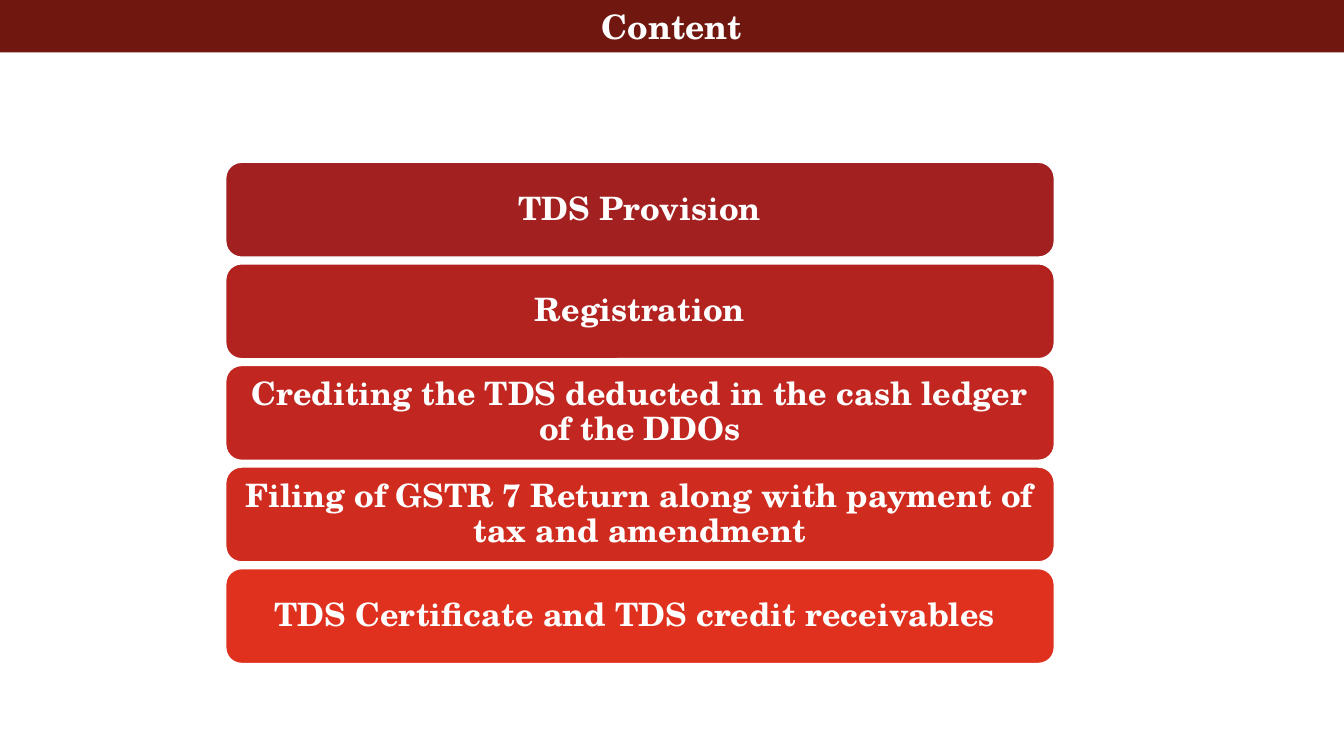
from pptx import Presentation
from pptx.dml.color import RGBColor
from pptx.enum.shapes import MSO_SHAPE
from pptx.enum.text import MSO_ANCHOR, PP_ALIGN
from pptx.util import Cm, Pt

FONT = "TeX Gyre Schola"
WHITE = "FFFFFF"
WIDTH, HEIGHT = 33.87, 19.05
TOPICS = [
    ("TDS Provision", "A32020"),
    ("Registration", "B22320"),
    ("Crediting the TDS deducted in the cash ledger of the DDOs", "C12720"),
    ("Filing of GSTR 7 Return along with payment of tax and amendment", "D02B1F"),
    ("TDS Certificate and TDS credit receivables ", "E0301E"),
]


def color(value):
    return RGBColor.from_string(value)


def write(sp, text, size=23, anchor=MSO_ANCHOR.MIDDLE, inset=(0.25, 0.25), spacing=None):
    tf = sp.text_frame
    tf.word_wrap = True
    tf.vertical_anchor = anchor
    tf.margin_left = tf.margin_right = Cm(inset[0])
    tf.margin_top = tf.margin_bottom = Cm(inset[1])
    p = tf.paragraphs[0]
    p.alignment = PP_ALIGN.CENTER
    p.line_spacing = spacing
    r = p.add_run()
    r.text = text
    r.font.name = FONT
    r.font.size = Pt(size)
    r.font.bold = True
    r.font.color.rgb = color(WHITE)


class Deck:
    """Holds the slide and draws its title bar and topic boxes."""

    def __init__(self, prs):
        self.s = prs.slides.add_slide(prs.slide_layouts[6])

    def box(self, kind, left, top, width, height, fill):
        sp = self.s.shapes.add_shape(kind, Cm(left), Cm(top), Cm(width), Cm(height))
        sp.shadow.inherit = False
        sp.fill.solid()
        sp.fill.fore_color.rgb = color(fill)
        sp.line.fill.background()
        return sp

    def title(self, text):
        sp = self.box(MSO_SHAPE.RECTANGLE, 0, 0, WIDTH, 1.32, "70180F")
        write(sp, text, size=24, anchor=MSO_ANCHOR.TOP, inset=(0, 0.15))

    def topic(self, text, top, fill):
        sp = self.box(MSO_SHAPE.ROUNDED_RECTANGLE, 5.69, top, 20.88, 2.39, fill)
        sp.line.color.rgb = color(WHITE)
        sp.line.width = Pt(1)
        write(sp, text, spacing=0.9)


def main():
    prs = Presentation()
    prs.slide_width, prs.slide_height = Cm(WIDTH), Cm(HEIGHT)
    deck = Deck(prs)
    deck.title("Content")
    for i, (text, fill) in enumerate(TOPICS):
        deck.topic(text, 4.09 + 2.56 * i, fill)
    prs.save("out.pptx")


if __name__ == "__main__":
    main()
